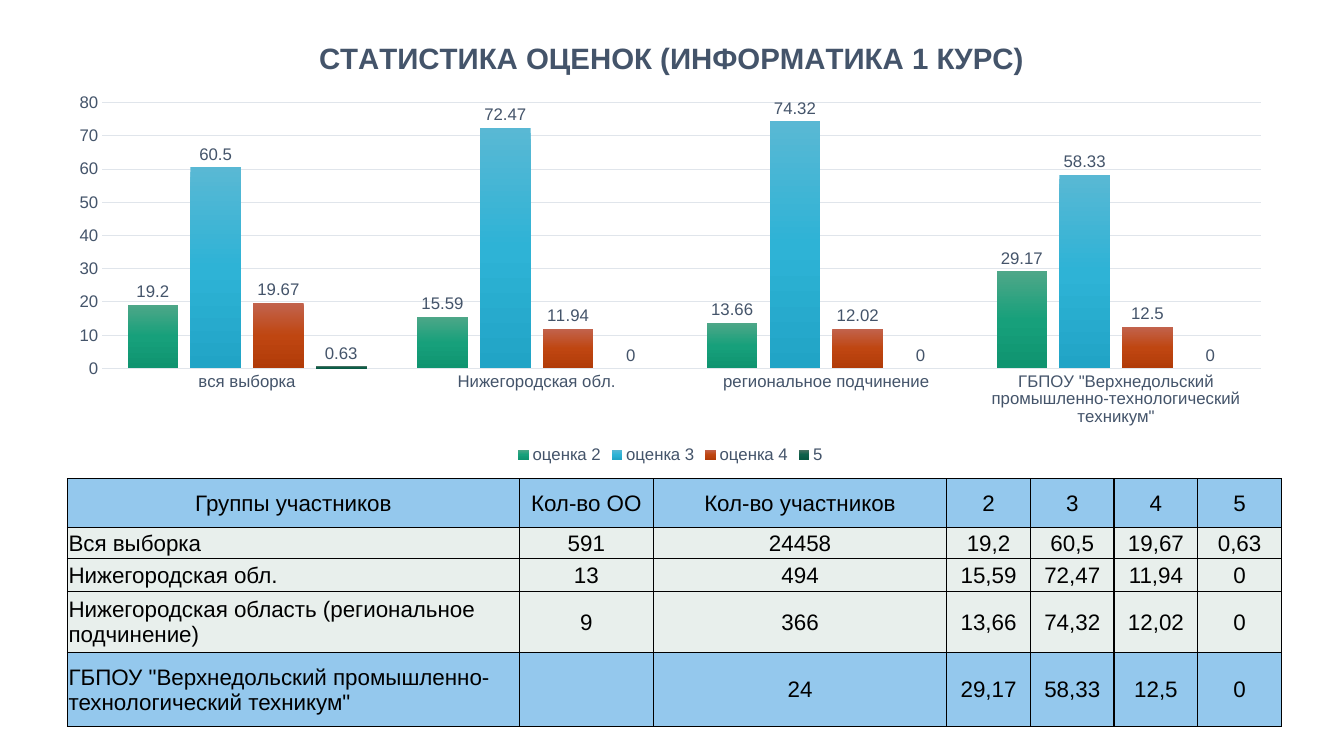
from dataclasses import dataclass

import pptx
import pptx.chart.data
import pptx.dml.color
import pptx.enum.chart
import pptx.enum.text
import pptx.oxml
import pptx.oxml.ns
import pptx.util

Inches, Pt = pptx.util.Inches, pptx.util.Pt
FONT = "Arial"
SLATE, PALE, BLACK = "44546A", "E0E5EB", "000000"
BLUE, MINT = "94C8ED", "E8EFEC"


@dataclass
class Group:
    chart_label: str
    table_label: str
    schools: str
    participants: str
    shares: tuple[float, ...]
    fill: str = MINT


@dataclass
class Grade:
    legend: str
    heading: str
    gradient: tuple[str, str, str]


TECHNICAL_SCHOOL = 'ГБПОУ "Верхнедольский промышленно-технологический техникум"'
GROUPS = [
    Group("вся выборка", "Вся выборка", "591", "24458", (19.2, 60.5, 19.67, 0.63)),
    Group("Нижегородская обл.", "Нижегородская обл.", "13", "494",
          (15.59, 72.47, 11.94, 0)),
    Group("региональное подчинение", "Нижегородская область (региональное подчинение)",
          "9", "366", (13.66, 74.32, 12.02, 0)),
    Group(TECHNICAL_SCHOOL, TECHNICAL_SCHOOL, "", "24", (29.17, 58.33, 12.5, 0), BLUE),
]
GRADES = [
    Grade("оценка 2", "2", ("4EA788", "17A07B", "0F9470")),
    Grade("оценка 3", "3", ("59B8D4", "2EB3D6", "21A4C6")),
    Grade("оценка 4", "4", ("C2634D", "BF4611", "B13B08")),
    Grade("5", "5", ("4C7263", "0E604A", "095943")),
]
COLUMN_WIDTHS = [4.48, 1.33, 2.91] + [0.83] * len(GRADES)
ROW_HEIGHTS = [0.48, 0.31, 0.33, 0.6, 0.74]


def rgb(color: str) -> pptx.dml.color.RGBColor:
    return pptx.dml.color.RGBColor.from_string(color)


def set_font(font, size: float, color: str, bold: bool = False) -> None:
    font.name, font.size, font.bold = FONT, Pt(size), bold
    font.color.rgb = rgb(color)


def set_line(line, color: str) -> None:
    line.width = Pt(0.75)
    line.color.rgb = rgb(color)


def place(element, sizes: dict[str, float], inner: bool = False) -> None:
    """Give a chart title or plot area a manual layout in fractions of the chart."""
    qn = pptx.oxml.ns.qn
    settings = {"layoutTarget": "inner"} if inner else {}
    settings |= {"xMode": "edge", "yMode": "edge"} | sizes
    body = "".join(f'<c:{key} val="{value}"/>' for key, value in settings.items())
    layout = pptx.oxml.parse_xml(
        f'<c:layout {pptx.oxml.ns.nsdecls("c")}><c:manualLayout>{body}'
        "</c:manualLayout></c:layout>")
    for old in element.findall(qn("c:layout")):
        element.remove(old)
    text = element.find(qn("c:tx"))
    element.insert(0 if text is None else element.index(text) + 1, layout)


def fill_gradient(series, colors: tuple[str, str, str]) -> None:
    stops = "".join(f'<a:gs pos="{i * 50000}"><a:srgbClr val="{color}"/></a:gs>'
                    for i, color in enumerate(colors))
    series._element.get_or_add_spPr().append(pptx.oxml.parse_xml(
        f'<a:gradFill {pptx.oxml.ns.nsdecls("a")}><a:gsLst>{stops}</a:gsLst>'
        '<a:lin ang="5400000" scaled="0"/></a:gradFill>'))


def add_grade_chart(slide) -> None:
    data = pptx.chart.data.CategoryChartData()
    data.categories = [group.chart_label for group in GROUPS]
    for i, grade in enumerate(GRADES):
        data.add_series(grade.legend, [group.shares[i] for group in GROUPS])
    chart = slide.shapes.add_chart(
        pptx.enum.chart.XL_CHART_TYPE.COLUMN_CLUSTERED,
        Inches(0.55), Inches(0.19), Inches(12.2), Inches(4.45), data).chart
    set_font(chart.font, 12, SLATE)

    heading = chart.chart_title.text_frame.paragraphs[0]
    heading.text = "СТАТИСТИКА ОЦЕНОК (ИНФОРМАТИКА 1 КУРС)"
    set_font(heading.font, 21, SLATE, bold=True)
    place(chart.chart_title._element, {"x": 0.21, "y": 0.034})
    place(chart._chartSpace.chart.plotArea,
          {"x": 0.038, "y": 0.186, "w": 0.942, "h": 0.593}, inner=True)

    chart.has_legend = True
    chart.legend.position = pptx.enum.chart.XL_LEGEND_POSITION.BOTTOM
    chart.legend.include_in_layout = False
    set_font(chart.legend.font, 12, SLATE)

    for axis in (chart.category_axis, chart.value_axis):
        axis.major_tick_mark = pptx.enum.chart.XL_TICK_MARK.NONE
        set_font(axis.tick_labels.font, 12, SLATE)
    set_line(chart.category_axis.format.line, PALE)
    shares = chart.value_axis
    shares.minimum_scale, shares.maximum_scale, shares.major_unit = 0, 80, 10
    shares.format.line.fill.background()
    set_line(shares.major_gridlines.format.line, PALE)

    plot = chart.plots[0]
    plot.gap_width, plot.overlap, plot.vary_by_categories = 100, -24, False
    for series, grade in zip(plot.series, GRADES):
        fill_gradient(series, grade.gradient)
        series.format.line.fill.background()
        labels = series.data_labels
        labels.show_value = True
        labels.position = pptx.enum.chart.XL_LABEL_POSITION.OUTSIDE_END
        set_font(labels.font, 12, SLATE)


def format_cell(cell, text: str, fill: str, centered: bool) -> None:
    cell.margin_left = cell.margin_right = cell.margin_top = Inches(0.01)
    cell.margin_bottom = 0
    cell.vertical_anchor = pptx.enum.text.MSO_ANCHOR.MIDDLE
    properties = cell._tc.get_or_add_tcPr()
    for side in "LRTB":
        properties.append(pptx.oxml.parse_xml(
            f'<a:ln{side} {pptx.oxml.ns.nsdecls("a")} w="{Pt(1)}"><a:solidFill>'
            f'<a:srgbClr val="{BLACK}"/></a:solidFill></a:ln{side}>'))
    cell.fill.solid()
    cell.fill.fore_color.rgb = rgb(fill)
    paragraph = cell.text_frame.paragraphs[0]
    if text:
        paragraph.text = text
    align = pptx.enum.text.PP_ALIGN
    paragraph.alignment = align.CENTER if centered else align.LEFT
    set_font(paragraph.font, 16, BLACK)


def add_group_table(slide) -> None:
    headings = ["Группы участников", "Кол-во ОО", "Кол-во участников"]
    rows = [(BLUE, headings + [grade.heading for grade in GRADES])]
    for group in GROUPS:
        shares = [f"{share:g}".replace(".", ",") for share in group.shares]
        rows.append((group.fill,
                     [group.table_label, group.schools, group.participants] + shares))
    table = slide.shapes.add_table(
        len(rows), len(COLUMN_WIDTHS), Inches(0.67), Inches(4.75),
        Inches(sum(COLUMN_WIDTHS)), Inches(sum(ROW_HEIGHTS))).table
    table.first_row = table.horz_banding = False
    for column, width in zip(table.columns, COLUMN_WIDTHS):
        column.width = Inches(width)
    for r, (fill, texts) in enumerate(rows):
        table.rows[r].height = Inches(ROW_HEIGHTS[r])
        for c, text in enumerate(texts):
            format_cell(table.cell(r, c), text, fill, centered=r == 0 or c > 0)


def main() -> None:
    presentation = pptx.Presentation()
    presentation.slide_width, presentation.slide_height = Inches(13.33), Inches(7.5)
    slide = presentation.slides.add_slide(presentation.slide_layouts[6])
    add_group_table(slide)
    add_grade_chart(slide)
    presentation.save("out.pptx")


if __name__ == "__main__":
    main()
